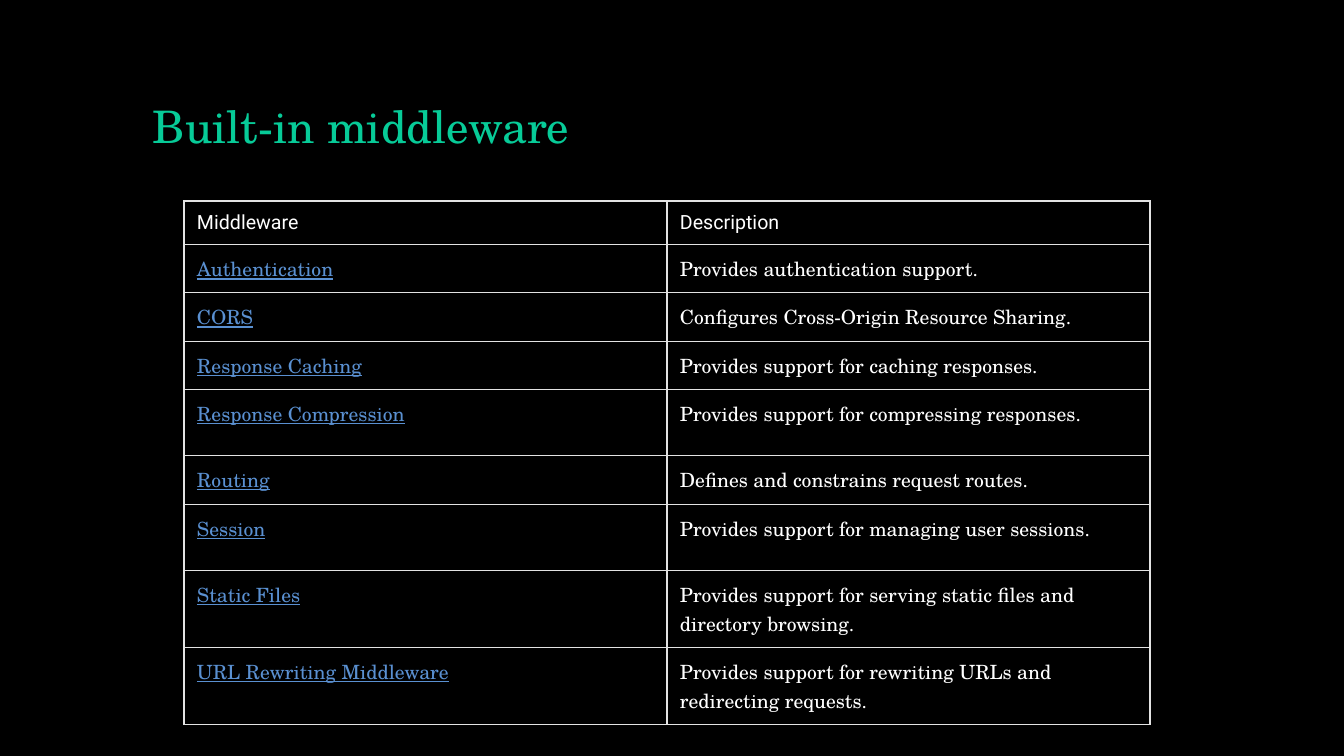
from dataclasses import dataclass

import lxml.etree
import pptx
import pptx.dml.color
import pptx.enum.text
import pptx.oxml.ns
import pptx.util


@dataclass(frozen=True)
class Theme:
    """Hold the colours, fonts and type sizes of the slide."""
    background: str = "000000"
    title: str = "07CB98"
    link: str = "5A90D1"
    text: str = "FFFFFF"
    border: str = "E3E3E3"
    serif: str = "TeX Gyre Schola"
    sans: str = "Roboto"
    title_size: int = 32
    body_size: int = 14


THEME = Theme()
EMU_PER_PX = 914400 / 100.8
ANCHOR = pptx.enum.text.MSO_ANCHOR

HEADINGS = ("Middleware", "Description")
HEADING_HEIGHT = 42
MIDDLEWARE = [
    ("Authentication", "Provides authentication support.", 48),
    ("CORS", "Configures Cross-Origin Resource Sharing.", 49),
    ("Response Caching", "Provides support for caching responses.", 48),
    ("Response Compression", "Provides support for compressing responses.", 66),
    ("Routing", "Defines and constrains request routes.", 49),
    ("Session", "Provides support for managing user sessions.", 66),
    ("Static Files", "Provides support for serving static files and directory browsing.", 77),
    ("URL Rewriting Middleware", "Provides support for rewriting URLs and redirecting requests.", 77),
]


def px(length):
    """Turn pixels into EMU."""
    return pptx.util.Emu(round(length * EMU_PER_PX))


def rgb(value):
    """Turn a hexadecimal string into a colour."""
    return pptx.dml.color.RGBColor.from_string(value)


def write_text(frame, text, *, font=THEME.serif, size=THEME.body_size,
               color=THEME.text, underline=False, line_spacing=None):
    """Write one formatted paragraph into a text frame."""
    frame.word_wrap = True
    paragraph = frame.paragraphs[0]
    paragraph.line_spacing = line_spacing
    run = paragraph.add_run()
    run.text = text
    run.font.name = font
    run.font.size = pptx.util.Pt(size)
    run.font.color.rgb = rgb(color)
    run.font.underline = underline


def add_title(slide, text, left, top, width, height):
    """Add the title, resting on the bottom of its box."""
    shape = slide.shapes.add_textbox(px(left), px(top), px(width), px(height))
    shape.text_frame.vertical_anchor = ANCHOR.BOTTOM
    write_text(shape.text_frame, text, size=THEME.title_size,
               color=THEME.title, line_spacing=0.9)


def set_borders(cell, top, bottom):
    """Draw the four borders of a cell, with widths in points."""
    properties = cell._tc.get_or_add_tcPr()
    widths = {"a:lnL": 1, "a:lnR": 1, "a:lnT": top, "a:lnB": bottom}
    for position, (tag, width) in enumerate(widths.items()):
        line = lxml.etree.Element(pptx.oxml.ns.qn(tag), w=str(pptx.util.Pt(width)))
        fill = lxml.etree.SubElement(line, pptx.oxml.ns.qn("a:solidFill"))
        lxml.etree.SubElement(fill, pptx.oxml.ns.qn("a:srgbClr"), val=THEME.border)
        properties.insert(position, line)


def fill_cell(cell, text, anchor=ANCHOR.TOP, top=0.75, bottom=0.75, **text_format):
    """Give a cell its text, margins, fill and borders."""
    cell.margin_left = cell.margin_right = px(13)
    cell.margin_top = cell.margin_bottom = px(10)
    cell.vertical_anchor = anchor
    cell.fill.background()
    set_borders(cell, top, bottom)
    write_text(cell.text_frame, text, **text_format)


def add_middleware_table(slide, left, top, width):
    """Add the table of middleware and descriptions."""
    heights = [HEADING_HEIGHT] + [height for _, _, height in MIDDLEWARE]
    table = slide.shapes.add_table(len(heights), len(HEADINGS), px(left), px(top),
                                   px(width), px(sum(heights))).table
    table.horz_banding = False
    for row, height in zip(table.rows, heights):
        row.height = px(height)
    for column, heading in enumerate(HEADINGS):
        table.columns[column].width = px(width // len(HEADINGS))
        fill_cell(table.cell(0, column), heading, anchor=ANCHOR.BOTTOM, top=1,
                  font=THEME.sans)
    for row, (name, description, _) in enumerate(MIDDLEWARE, start=1):
        bottom = 1 if row == len(MIDDLEWARE) else 0.75
        fill_cell(table.cell(row, 0), name, bottom=bottom, color=THEME.link,
                  underline=True)
        fill_cell(table.cell(row, 1), description, bottom=bottom)


def main():
    """Build and save the slide."""
    presentation = pptx.Presentation()
    presentation.slide_width, presentation.slide_height = px(1344), px(756)
    slide = presentation.slides.add_slide(presentation.slide_layouts[6])
    slide.background.fill.solid()
    slide.background.fill.fore_color.rgb = rgb(THEME.background)
    add_title(slide, "Built-in middleware", 143, 40, 1058, 118)
    add_middleware_table(slide, 184, 201, 966)
    presentation.save("out.pptx")


if __name__ == "__main__":
    main()
